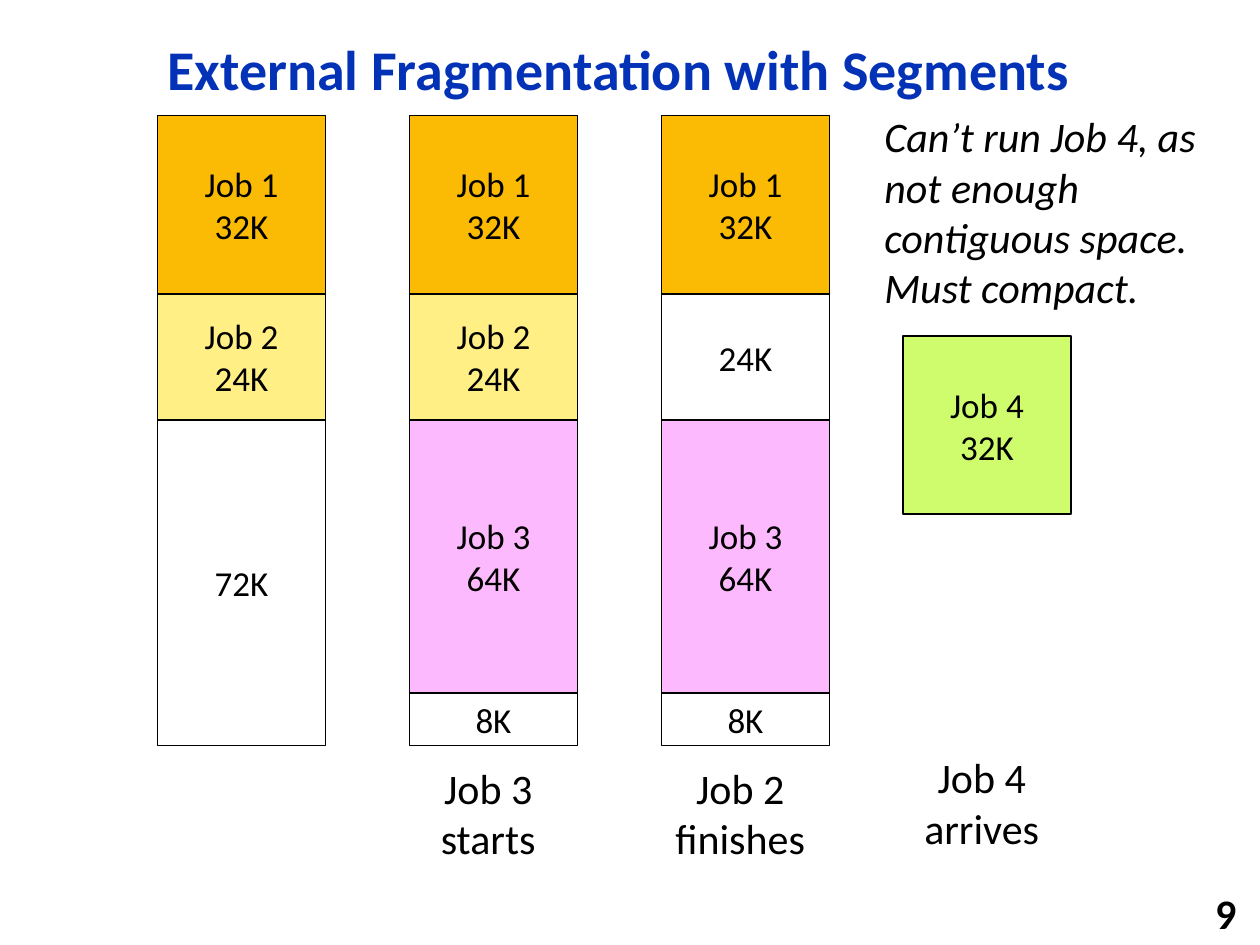
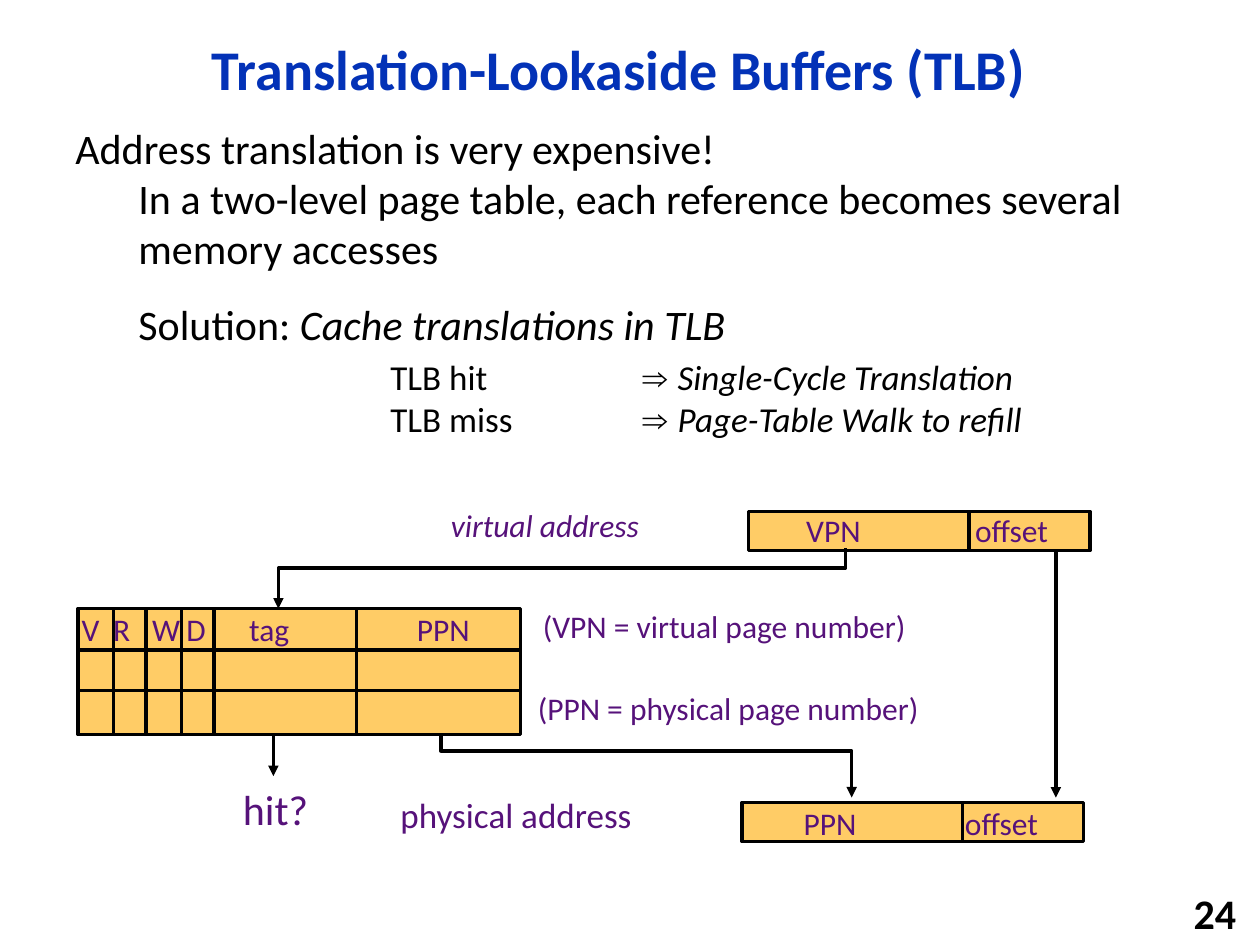
from lxml import etree
from pptx import Presentation
from pptx.dml.color import RGBColor
from pptx.enum.shapes import MSO_CONNECTOR, MSO_SHAPE
from pptx.enum.text import MSO_ANCHOR, PP_ALIGN
from pptx.oxml.ns import qn
from pptx.util import Inches, Pt

FONT = "Calibri"
BLACK, BLUE, PURPLE = "000000", "0332B7", "56127A"
FREE, ORANGE, FIELD = "FFFFFF", "FBBA03", "FFCC66"

# Memory maps, measured in units of a twelfth of an inch
UNIT = 1 / 12
BLOCK_WIDTH, MEMORY_TOP = 16, 11
BLOCK_HEIGHT = {"8K": 5, "24K": 12, "32K": 17, "64K": 26, "72K": 31}
JOB_FILL = {"Job 1": ORANGE, "Job 2": "FFEF85", "Job 3": "FDB9FE",
            "Job 4": "CEFC6C", None: FREE}
# left, top, blocks from the top down, caption, caption top
MEMORY_MAPS = [
    (15, MEMORY_TOP, [("Job 1", "32K"), ("Job 2", "24K"), (None, "72K")], None, 0),
    (39, MEMORY_TOP, [("Job 1", "32K"), ("Job 2", "24K"), ("Job 3", "64K"), (None, "8K")],
     "Job 3 starts", 72),
    (63, MEMORY_TOP, [("Job 1", "32K"), (None, "24K"), ("Job 3", "64K"), (None, "8K")],
     "Job 2 finishes", 72),
    (86, 32, [("Job 4", "32K")], "Job 4 arrives", 71),
]
COMPACT_NOTE = "Can’t run Job 4, as not enough contiguous space. Must compact."

# Translation buffer, in inches
# left indent, space before in points, size, runs of (text, italic, font)
TLB_TEXT = [
    (0, 0, 24, [("Address translation is very expensive!", False, FONT)]),
    (0.5, 0, 24, [("In a two-level page table, each reference becomes several "
                   "memory accesses", False, FONT)]),
    (0.5, 14.4, 24, [("Solution: ", False, FONT), ("Cache translations in TLB", True, FONT)]),
    (0, 4, 20, [("\tTLB hit\t", False, FONT), ("⇒ ", False, "Arial"),
                ("Single-Cycle Translation", True, FONT)]),
    (0, 0, 20, [("\tTLB miss\t", False, FONT), ("⇒ ", False, "Arial"),
                ("Page-Table Walk to refill", True, FONT)]),
]
TLB_TABS = (2.5, 4.5)
# left, top, width, height, column lines, row lines
FIELD_BOXES = [
    (0.62, 4.83, 3.51, 1, (0.9, 1.16, 1.44, 1.7, 2.83), (5.16, 5.48)),
    (5.94, 4.06, 2.71, 0.31, (7.69,), ()),
    (5.89, 6.37, 2.71, 0.31, (7.64,), ()),
]
# top, size, italic, labels as (text, left)
LABEL_ROWS = [
    (4.01, 18, False, [("VPN", 6.3), ("offset", 7.64)]),
    (4.79, 18, False, [("V", 0.55), ("R", 0.8), ("W", 1.11), ("D", 1.38),
                       ("tag", 1.88), ("PPN", 3.21)]),
    (6.33, 18, False, [("PPN", 6.28), ("offset", 7.56)]),
    (3.97, 18, True, [("virtual address", 3.48)]),
    (6.25, 20, False, [("physical address", 3.08)]),
    (6.17, 24, False, [("hit?", 1.83)]),
    (4.77, 18, False, [("(VPN = virtual page number)", 4.21)]),
    (5.42, 18, False, [("(PPN = physical page number)", 4.17)]),
]
ARROWS = [
    [(8.38, 4.36), (8.38, 6.33)],
    [(2.17, 5.83), (2.17, 6.16)],
    [(3.5, 5.83), (3.5, 5.96), (6.76, 5.96), (6.76, 6.33)],
    [(6.71, 4.35), (6.71, 4.51), (2.21, 4.51), (2.21, 4.83)],
]


def color(hex_code):
    return RGBColor.from_string(hex_code)


def style_font(font, size, hex_code=BLACK, bold=False, italic=False, name=FONT):
    font.name, font.size = name, Pt(size)
    font.bold, font.italic = bold, italic
    font.color.rgb = color(hex_code)


def add_text(slide, box, text, size, hex_code=BLACK, align=PP_ALIGN.LEFT,
             anchor=MSO_ANCHOR.TOP, bold=False, italic=False):
    """Add a one-paragraph text box and return its paragraph."""
    frame = slide.shapes.add_textbox(*map(Inches, box)).text_frame
    frame.word_wrap = True
    frame.vertical_anchor = anchor
    paragraph = frame.paragraphs[0]
    paragraph.text, paragraph.alignment = text, align
    style_font(paragraph.font, size, hex_code, bold, italic)
    return paragraph


def add_box(slide, box, fill, line_width):
    shape = slide.shapes.add_shape(MSO_SHAPE.RECTANGLE, *map(Inches, box))
    shape.shadow.inherit = False
    shape.fill.solid()
    shape.fill.fore_color.rgb = color(fill)
    style_line(shape.line, line_width)
    return shape


def style_line(line, width=2):
    line.color.rgb = color(BLACK)
    line.width = Pt(width)


def add_line(slide, start, end):
    connector = slide.shapes.add_connector(
        MSO_CONNECTOR.STRAIGHT, *map(Inches, (*start, *end)))
    style_line(connector.line)
    etree.SubElement(connector.element.spPr, qn("a:effectLst"))
    return connector


def add_arrow(slide, points):
    """Draw a straight or bent arrow through the points."""
    if len(points) == 2:
        shape = add_line(slide, *points)
    else:
        start, *corners = [(Inches(x), Inches(y)) for x, y in points]
        builder = slide.shapes.build_freeform(*start)
        builder.add_line_segments(corners, close=False)
        shape = builder.convert_to_shape()
        shape.shadow.inherit = False
        shape.fill.background()
        style_line(shape.line)
    outline = shape.element.spPr.find(qn("a:ln"))
    etree.SubElement(outline, qn("a:tailEnd"), type="triangle")


def new_slide(presentation, title, number):
    slide = presentation.slides.add_slide(presentation.slide_layouts[6])
    heading = add_text(slide, (0.92, 0.17, 7.98, 0.81), title, 32, BLUE,
                       PP_ALIGN.CENTER, MSO_ANCHOR.MIDDLE, bold=True)
    heading.line_spacing = 0.9
    add_text(slide, (7.83, 7.08, 2.08, 0.32), number, 24, BLACK,
             PP_ALIGN.RIGHT, MSO_ANCHOR.MIDDLE, bold=True)
    return slide


def add_memory_block(slide, box, job, size):
    shape = add_box(slide, box, JOB_FILL[job], 1)
    frame = shape.text_frame
    frame.margin_left = frame.margin_right = frame.margin_top = frame.margin_bottom = 0
    frame.vertical_anchor = MSO_ANCHOR.MIDDLE
    frame.text = f"{job}\n{size}" if job else size
    for paragraph in frame.paragraphs:
        paragraph.alignment = PP_ALIGN.CENTER
        style_font(paragraph.font, 20)


def build_fragmentation(presentation):
    slide = new_slide(presentation, "External Fragmentation with Segments", "9")
    for left, top, blocks, caption, caption_top in MEMORY_MAPS:
        for job, size in blocks:
            height = BLOCK_HEIGHT[size]
            box = [UNIT * n for n in (left, top, BLOCK_WIDTH, height)]
            add_memory_block(slide, box, job, size)
            top += height
        if caption:
            box = [UNIT * n for n in (left - 1, caption_top, BLOCK_WIDTH + 1, 11)]
            add_text(slide, box, caption, 24, align=PP_ALIGN.CENTER)
    add_text(slide, (6.92, 0.83, 2.92, 1.72), COMPACT_NOTE, 24, italic=True)


def add_tlb_text(slide):
    frame = slide.shapes.add_textbox(*map(Inches, (0.5, 0.92, 9.08, 2.66))).text_frame
    frame.word_wrap = True
    for index, (indent, space, size, runs) in enumerate(TLB_TEXT):
        paragraph = frame.add_paragraph() if index else frame.paragraphs[0]
        paragraph.space_before = Pt(space)
        properties = paragraph._p.get_or_add_pPr()
        properties.set("marL", str(Inches(indent)))
        if runs[0][0].startswith("\t"):
            tabs = etree.SubElement(properties, qn("a:tabLst"))
            for position in TLB_TABS:
                etree.SubElement(tabs, qn("a:tab"), pos=str(Inches(position)), algn="l")
        for text, italic, name in runs:
            run = paragraph.add_run()
            run.text = text
            style_font(run.font, size, italic=italic, name=name)


def build_tlb(presentation):
    slide = new_slide(presentation, "Translation-Lookaside Buffers (TLB)", "24")
    add_tlb_text(slide)
    for left, top, width, height, columns, rows in FIELD_BOXES:
        add_box(slide, (left, top, width, height), FIELD, 2)
        for x in columns:
            add_line(slide, (x, top), (x, top + height))
        for y in rows:
            add_line(slide, (left, y), (left + width, y))
    for top, size, italic, labels in LABEL_ROWS:
        for text, left in labels:
            box = (left, top, 0.3 + len(text) * size / 150, 0.1 + size / 60)
            add_text(slide, box, text, size, PURPLE, italic=italic)
    for points in ARROWS:
        add_arrow(slide, points)


def main():
    presentation = Presentation()
    presentation.slide_width, presentation.slide_height = Inches(10), Inches(7.5)
    build_fragmentation(presentation)
    build_tlb(presentation)
    presentation.save("out.pptx")


if __name__ == "__main__":
    main()
